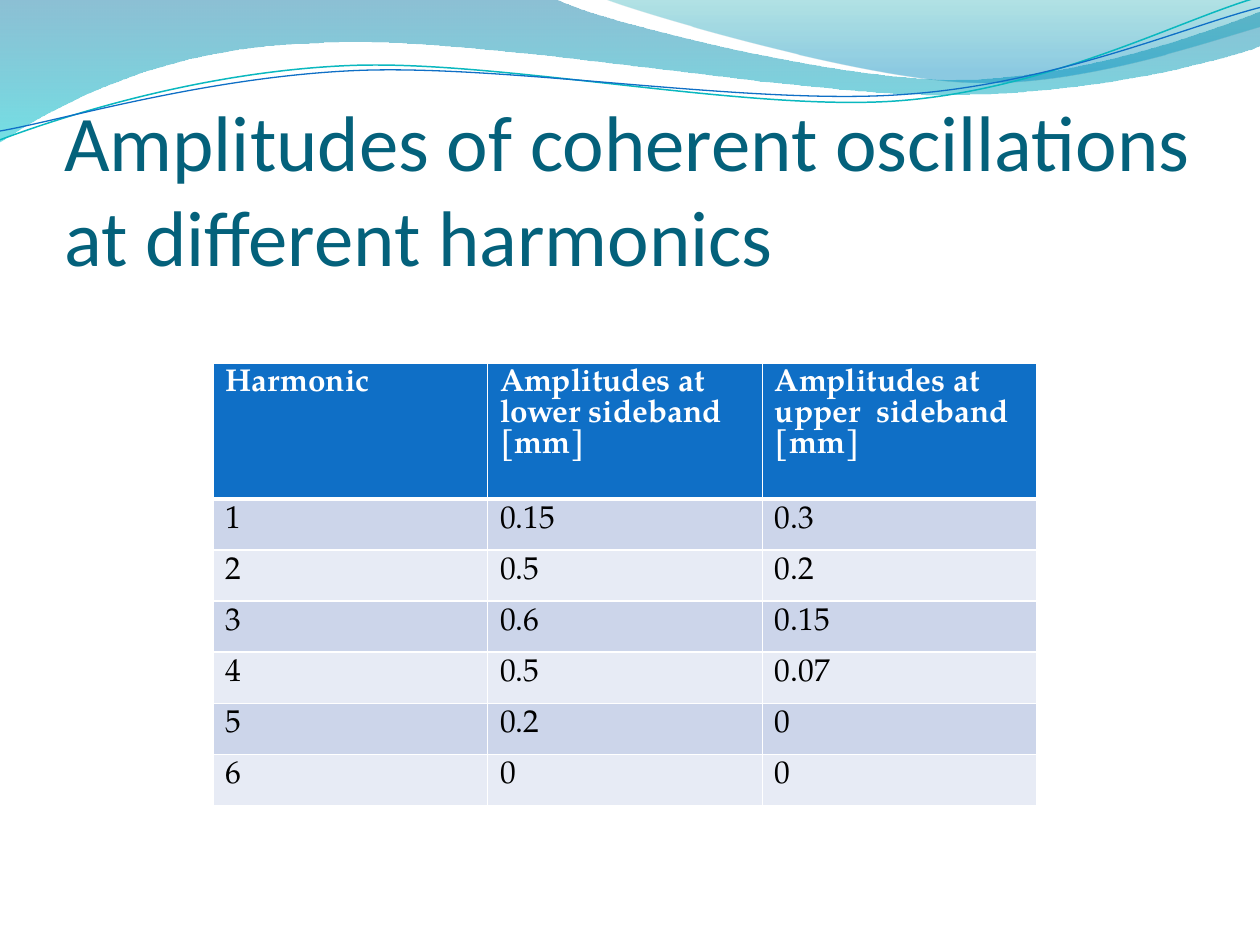
from math import cos, radians, sin

from lxml.etree import SubElement
from pptx import Presentation
from pptx.dml.color import RGBColor
from pptx.enum.text import MSO_ANCHOR
from pptx.oxml import parse_xml
from pptx.oxml.ns import nsdecls, qn
from pptx.util import Inches, Pt

WHITE = RGBColor(0xFF, 0xFF, 0xFF)
BLACK = RGBColor(0x00, 0x00, 0x00)
TITLE_TEAL = RGBColor(0x04, 0x61, 0x7B)
HEADER_BLUE = RGBColor(0x0F, 0x6F, 0xC6)
LINE_TEAL = RGBColor(0x0A, 0xB8, 0xBF)
BAND_DARK = RGBColor(0xCC, 0xD5, 0xEA)
BAND_LIGHT = RGBColor(0xE7, 0xEB, 0xF5)
DEEP_BLUE = RGBColor(0x00, 0x74, 0xA1)
AQUA = RGBColor(0x00, 0xC6, 0xCF)
SEA_GREEN = RGBColor(0x00, 0xA1, 0xA9)
SKY_BLUE = RGBColor(0x00, 0x8B, 0xBF)

GRID_COLS, GRID_ROWS = 10, 7.5
CURVE_TILT = -2.7

LEFT_WAVE = [
    [(0, 0)], [(4.4, -0.01)],
    [(4.76, 0.17), (6.64, 0.63), (7.58, 0.63)],
    [(8.53, 0.63), (9.58, 0.26), (10, 0.09)], [(10.01, 0.36)],
    [(9.83, 0.44), (8.7, 0.76), (7.46, 0.75)],
    [(6.22, 0.75), (3.82, 0.28), (2.57, 0.34)],
    [(1.29, 0.36), (0.46, 0.83), (-0.01, 1.13)], [(0, 0)],
]
RIGHT_WAVE = [
    [(4.79, -0.01)],
    [(5.09, 0.11), (6.82, 0.62), (7.69, 0.65)],
    [(8.56, 0.69), (9.61, 0.32), (10, 0.21)], [(10, 0)], [(4.79, -0.01)],
]
TEAL_CURVE = [
    [(0, 1.11)],
    [(0.48, 0.93), (1.58, 0.57), (2.77, 0.52)],
    [(3.95, 0.47), (5.93, 0.89), (7.13, 0.8)],
    [(8.33, 0.71), (9.38, 0.15), (9.98, -0.02)],
]
BLUE_CURVE = [
    [(0, 1.04)],
    [(0.47, 0.96), (1.64, 0.61), (2.83, 0.56)],
    [(4.03, 0.51), (5.97, 0.84), (7.17, 0.75)],
    [(8.36, 0.67), (9.41, 0.21), (10, 0.06)],
]

TITLE = "Amplitudes of coherent oscillations at different harmonics"
HEADERS = [
    ["Harmonic"],
    ["Amplitudes at lower sideband", "[mm]"],
    ["Amplitudes at upper  sideband", "[mm]"],
]
AMPLITUDES = [
    ("1", "0.15", "0.3"),
    ("2", "0.5", "0.2"),
    ("3", "0.6", "0.15"),
    ("4", "0.5", "0.07"),
    ("5", "0.2", "0"),
    ("6", "0", "0"),
]


def turn(segments, center, degrees):
    cx, cy = center
    c, s = cos(radians(degrees)), sin(radians(degrees))
    return [
        [(cx + (x - cx) * c - (y - cy) * s, cy + (x - cx) * s + (y - cy) * c)
         for x, y in segment]
        for segment in segments
    ]


def add_path(slide, segments, closed):
    (start,), *rest = segments
    builder = slide.shapes.build_freeform(Inches(start[0]), Inches(start[1]))
    builder.add_line_segments(
        [(Inches(x), Inches(y)) for segment in rest for x, y in segment], close=closed)
    path = builder.convert_to_shape()
    path.shadow.inherit = False
    steps = iter(list(path._element.iter(qn("a:lnTo"))))
    for segment in rest:
        step = next(steps)
        if len(segment) == 3:
            step.addprevious(parse_xml(f'<a:cubicBezTo {nsdecls("a")}/>'))
            bend = step.getprevious()
            for part in (step, next(steps), next(steps)):
                bend.append(part[0])
                part.getparent().remove(part)
    return path


def add_wave(slide, segments, stops):
    wave = add_path(slide, segments, True)
    wave.line.fill.background()
    wave.fill.gradient()
    wave.fill.gradient_angle = 270
    for stop, (position, color, _) in zip(wave.fill.gradient_stops, stops):
        stop.position = position
        stop.color.rgb = color
    for tint, (_, _, opacity) in zip(wave._element.spPr.iter(qn("a:srgbClr")), stops):
        SubElement(tint, qn("a:alpha"), val=str(opacity * 1000))


def add_curve(slide, segments, center, color, width):
    curve = add_path(slide, turn(segments, center, -CURVE_TILT), False)
    curve.rotation = CURVE_TILT
    curve.fill.background()
    curve.line.color.rgb = color
    curve.line.width = Pt(width)


def add_run(paragraph, text, font, size, color, bold=False):
    run = paragraph.add_run()
    run.text = text
    run.font.name = font
    run.font.size = Pt(size)
    run.font.color.rgb = color
    run.font.bold = bold


def add_title(slide):
    box = slide.shapes.add_textbox(Inches(0.51), Inches(0.99), Inches(9), Inches(1.25))
    frame = box.text_frame
    frame.word_wrap = True
    frame.vertical_anchor = MSO_ANCHOR.BOTTOM
    frame.margin_left = frame.margin_right = frame.margin_bottom = 0
    frame.margin_top = Inches(0.05)
    add_run(frame.paragraphs[0], TITLE, "Calibri", 45, TITLE_TEAL)


def set_borders(cell, bottom=1, top=1):
    sides = {"lnL": 1, "lnR": 1, "lnT": top, "lnB": bottom}
    for index, (side, width) in enumerate(sides.items()):
        cell._tc.get_or_add_tcPr().insert(index, parse_xml(
            f'<a:{side} {nsdecls("a")} w="{Pt(width)}"><a:solidFill>'
            f'<a:srgbClr val="{WHITE}"/></a:solidFill></a:{side}>'))


def fill_cell(cell, lines, fill, color, bold=False):
    cell.fill.solid()
    cell.fill.fore_color.rgb = fill
    frame = cell.text_frame
    for index, line in enumerate(lines):
        paragraph = frame.add_paragraph() if index else frame.paragraphs[0]
        add_run(paragraph, line, "TeX Gyre Pagella", 18, color, bold)


def add_amplitude_table(slide):
    header_height, row_height, column_width = Inches(1.08), Pt(29.2), Inches(2.18)
    table = slide.shapes.add_table(
        len(AMPLITUDES) + 1, len(HEADERS), Inches(1.69), Inches(2.88),
        column_width * len(HEADERS),
        header_height + row_height * len(AMPLITUDES)).table
    for column in table.columns:
        column.width = column_width
    for index, row in enumerate(table.rows):
        row.height = row_height if index else header_height
    for cell, lines in zip(table.rows[0].cells, HEADERS):
        fill_cell(cell, lines, HEADER_BLUE, WHITE, True)
        set_borders(cell, bottom=3)
    for index, values in enumerate(AMPLITUDES, 1):
        band = BAND_DARK if index % 2 else BAND_LIGHT
        for cell, value in zip(table.rows[index].cells, values):
            fill_cell(cell, [value], band, BLACK)
            set_borders(cell, top=3 if index == 1 else 1)


def main():
    deck = Presentation()
    deck.slide_width, deck.slide_height = Inches(GRID_COLS), Inches(GRID_ROWS)
    slide = deck.slides.add_slide(deck.slide_layouts[6])
    add_wave(slide, LEFT_WAVE, [(0, DEEP_BLUE, 45), (1, AQUA, 55)])
    add_wave(slide, RIGHT_WAVE, [(0, SEA_GREEN, 30), (0.8, SKY_BLUE, 45)])
    add_curve(slide, TEAL_CURVE, (4.99, 0.58), LINE_TEAL, 0.85)
    add_curve(slide, BLUE_CURVE, (5, 0.59), HEADER_BLUE, 0.75)
    add_title(slide)
    add_amplitude_table(slide)
    deck.save("out.pptx")


if __name__ == "__main__":
    main()
